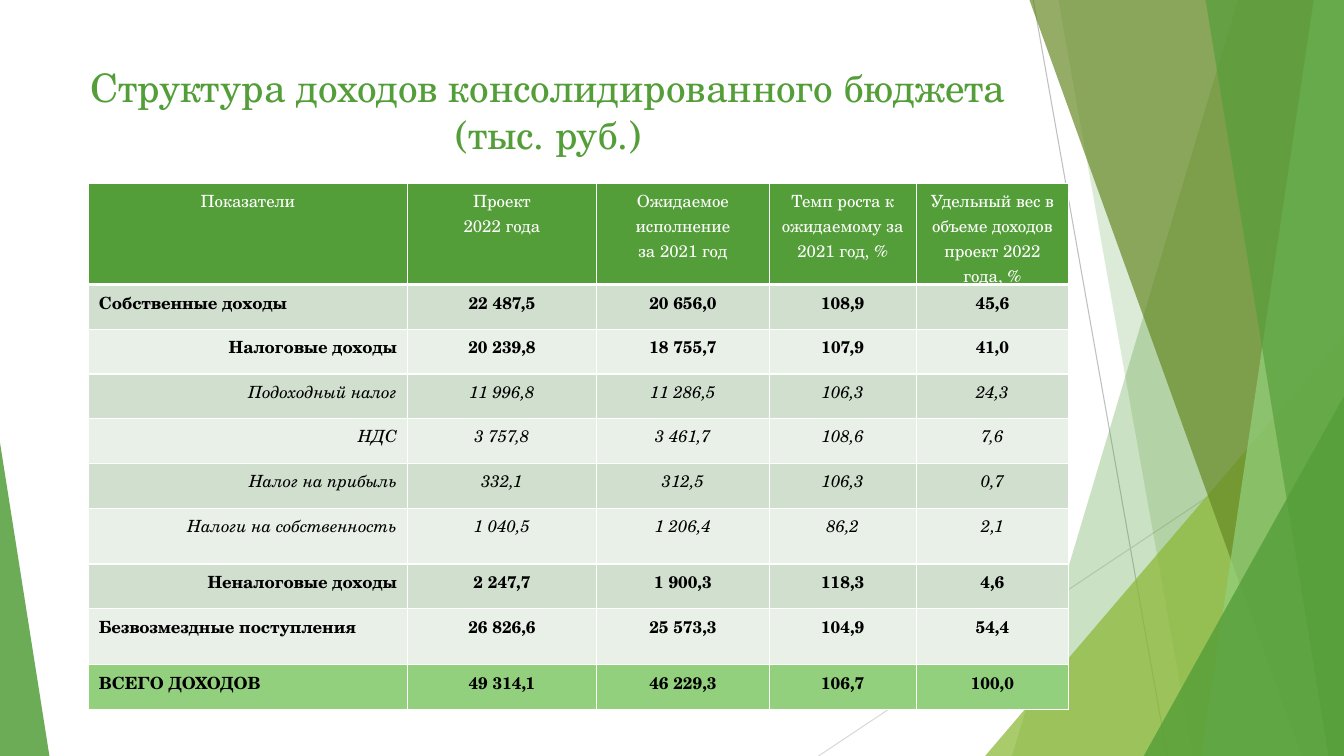
from lxml import etree
from pptx import Presentation
from pptx.dml.color import RGBColor
from pptx.enum.shapes import MSO_CONNECTOR, MSO_SHAPE
from pptx.enum.text import MSO_ANCHOR, PP_ALIGN
from pptx.oxml.ns import qn
from pptx.util import Inches, Pt

LEFT, CENTER, RIGHT = PP_ALIGN.LEFT, PP_ALIGN.CENTER, PP_ALIGN.RIGHT
TOP = MSO_ANCHOR.TOP
STRAIGHT = MSO_CONNECTOR.STRAIGHT
TRIANGLE = MSO_SHAPE.ISOSCELES_TRIANGLE

GREEN, LIGHT_GREEN, LIME, OLIVE = "549E39", "93D07D", "8AB833", "678A26"
BANDS = ("D1DFCE", "E9F0E8")
WHITE, BLACK = "FFFFFF", "000000"

HEADINGS = [
    "Показатели",
    "Проект\n2022 года",
    "Ожидаемое исполнение\nза 2021 год",
    "Темп роста к ожидаемому за 2021 год, %",
    "Удельный вес в объеме доходов проект 2022 года, %",
]
# Indicator, its alignment, is it a tax item, values
INCOME = [
    ("Собственные доходы", LEFT, False, "22 487,5", "20 656,0", "108,9", "45,6"),
    ("Налоговые доходы", RIGHT, False, "20 239,8", "18 755,7", "107,9", "41,0"),
    ("Подоходный налог", RIGHT, True, "11 996,8", "11 286,5", "106,3", "24,3"),
    ("НДС", RIGHT, True, "3 757,8", "3 461,7", "108,6", "7,6"),
    ("Налог на прибыль", RIGHT, True, "332,1", "312,5", "106,3", "0,7"),
    ("Налоги на собственность", RIGHT, True, "1 040,5", "1 206,4", "86,2", "2,1"),
    ("Неналоговые доходы", RIGHT, False, "2 247,7", "1 900,3", "118,3", "4,6"),
    ("Безвозмездные поступления", LEFT, False, "26 826,6", "25 573,3", "104,9", "54,4"),
    ("ВСЕГО ДОХОДОВ", LEFT, False, "49 314,1", "46 229,3", "106,7", "100,0"),
]
COLUMN_WIDTHS = [23.7, 14.1, 12.83, 10.95, 11.33]
ROW_HEIGHTS = [13.33] + [5.93] * 5 + [7.35, 5.93, 7.4, 5.93]


def rgb(color):
    return RGBColor.from_string(color)


def write(frame, text, size=12, color=BLACK, align=CENTER, bold=False,
          italic=False, font="TeX Gyre Schola"):
    frame.word_wrap = True
    frame.text = text
    for paragraph in frame.paragraphs:
        paragraph.alignment = align
        style = paragraph.font
        style.name, style.size = font, Pt(size)
        style.bold, style.italic = bold, italic
        style.color.rgb = rgb(color)


class BudgetSlide:
    """Draws on one slide; lengths are percent of its width and height."""

    def __init__(self, deck):
        self.width, self.height = deck.slide_width, deck.slide_height
        self.slide = deck.slides.add_slide(deck.slide_layouts[6])
        self.shapes = self.slide.shapes

    def x(self, share):
        return round(self.width * share / 100)

    def y(self, share):
        return round(self.height * share / 100)

    def box(self, left, top, width, height):
        return self.x(left), self.y(top), self.x(width), self.y(height)

    def paint(self, shape, color, opacity):
        shape.shadow.inherit = False
        shape.fill.solid()
        shape.fill.fore_color.rgb = rgb(color)
        shape.line.fill.background()
        tint = shape._element.spPr.find(qn("a:solidFill"))[0]
        etree.SubElement(tint, qn("a:alpha"), val=str(opacity * 1000))

    def line(self, start, end, color):
        line = self.shapes.add_connector(
            STRAIGHT, self.x(start[0]), self.y(start[1]), self.x(end[0]), self.y(end[1]))
        line.line.color.rgb = rgb(color)
        line.line.width = Pt(0.75)
        etree.SubElement(line._element.spPr, qn("a:effectLst"))

    def ribbon(self, top, bottom, color, opacity):
        """Full-height band from a slanted edge to the right of the slide."""
        outline = self.shapes.build_freeform(self.x(top), 0)
        corners = [(100, 0), (100, 100), (bottom, 100)]
        outline.add_line_segments([(self.x(x), self.y(y)) for x, y in corners])
        self.paint(outline.convert_to_shape(), color, opacity)

    def corner(self, left, top, width, apex, color, opacity):
        """Triangle that stands on the bottom edge."""
        triangle = self.shapes.add_shape(
            TRIANGLE, *self.box(left, top, width, 100 - top))
        triangle.adjustments[0] = apex
        self.paint(triangle, color, opacity)

    def title(self, text, *place):
        frame = self.shapes.add_textbox(*self.box(*place)).text_frame
        frame.vertical_anchor = TOP
        write(frame, text, size=28, color=GREEN)

    def table(self, left, top, widths, heights):
        place = self.box(left, top, sum(widths), sum(heights))
        table = self.shapes.add_table(len(heights), len(widths), *place).table
        table.horz_banding = False
        for column, width in zip(table.columns, widths):
            column.width = self.x(width)
        for row, height in zip(table.rows, heights):
            row.height = self.y(height)
        return table

    def cell(self, cell, text, fill, borders, **text_format):
        properties = cell._tc.get_or_add_tcPr()
        for side, points in zip("LRTB", borders):
            edge = etree.SubElement(properties, qn(f"a:ln{side}"), w=str(Pt(points)))
            paint = etree.SubElement(edge, qn("a:solidFill"))
            etree.SubElement(paint, qn("a:srgbClr"), val=WHITE)
        cell.fill.solid()
        cell.fill.fore_color.rgb = rgb(fill)
        write(cell.text_frame, text, **text_format)


def main():
    deck = Presentation()
    deck.slide_width, deck.slide_height = Inches(13.33), Inches(7.5)
    page = BudgetSlide(deck)

    # Background facets, from back to front
    page.line((76.88, 0), (86.85, 100), "BFBFBF")
    page.line((100, 53.73), (60.9, 100), "D9D9D9")
    page.ribbon(92.1, 75.3, GREEN, 30)
    page.ribbon(78.75, 88.75, GREEN, 20)
    page.corner(73.3, 44.4, 26.7, 1, LIME, 72)
    page.ribbon(76.6, 96.85, OLIVE, 70)
    page.ribbon(97.75, 89.4, LIGHT_GREEN, 70)
    page.ribbon(89.7, 98.85, GREEN, 65)
    page.corner(85.1, 52.4, 14.9, 1, GREEN, 80)
    page.corner(0, 58.53, 3.68, 0, GREEN, 85)

    page.title("Структура доходов консолидированного бюджета (тыс. руб.)",
               5.55, 7.73, 70.5, 16.4)

    # Income table: heading row, then one row for each indicator
    income = page.table(6.6, 24.3, COLUMN_WIDTHS, ROW_HEIGHTS)
    for column, heading in enumerate(HEADINGS):
        page.cell(income.cell(0, column), heading, GREEN, (1, 1, 1, 3), color=WHITE)
    for row, (indicator, align, is_tax, *values) in enumerate(INCOME, start=1):
        fill = LIGHT_GREEN if row == len(INCOME) else BANDS[(row - 1) % 2]
        borders = (1, 1, 3 if row == 1 else 1, 1)
        for column, text in enumerate([indicator, *values]):
            page.cell(income.cell(row, column), text, fill, borders,
                      align=CENTER if column else align,
                      bold=not is_tax, italic=is_tax)

    deck.save("out.pptx")


if __name__ == "__main__":
    main()
